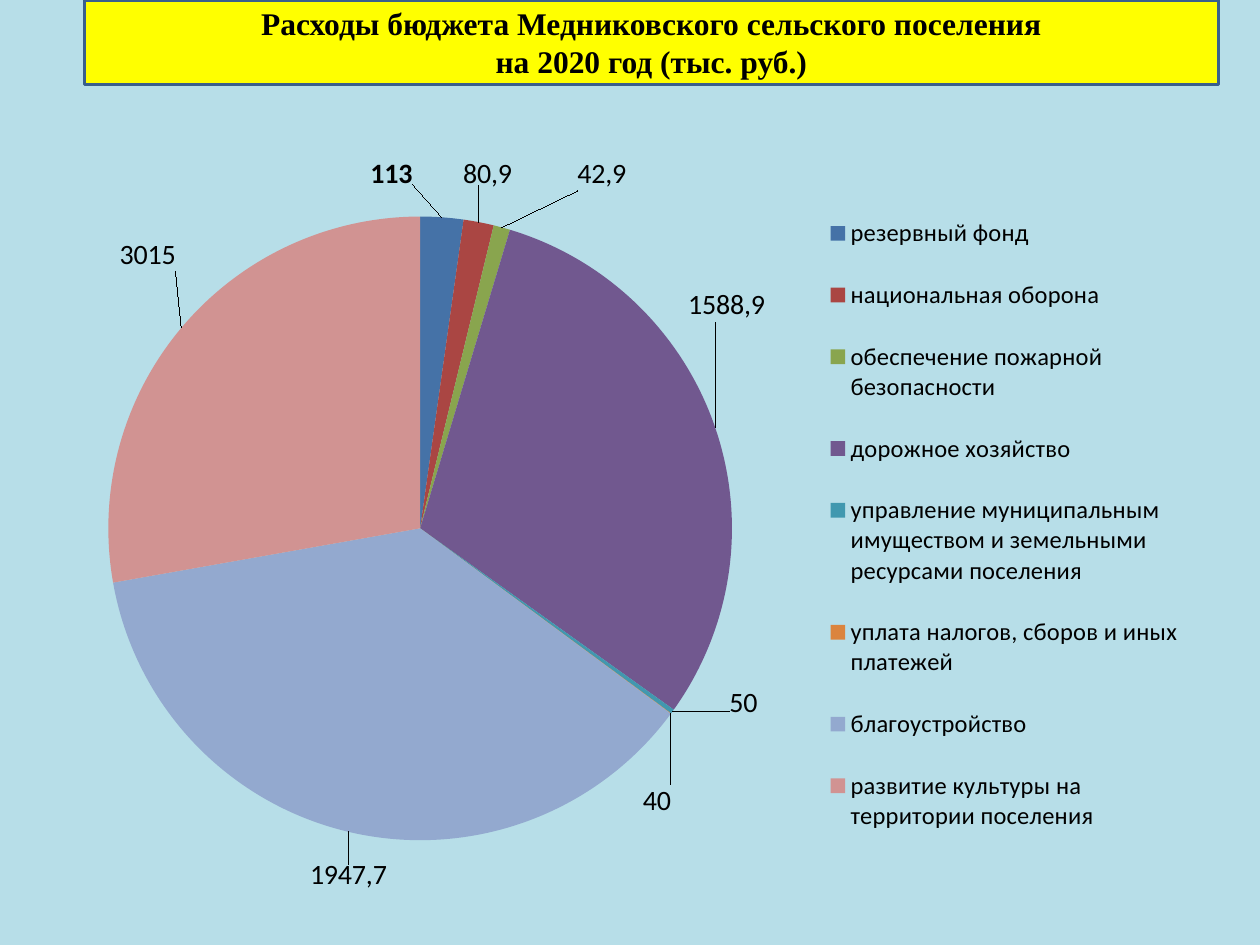
from dataclasses import dataclass

from pptx import Presentation
from pptx import util as u
from pptx.chart import data as chart_data
from pptx.dml.color import RGBColor
from pptx.enum import chart as ch, text
from pptx.oxml import parse_xml
from pptx.oxml.ns import nsdecls, qn


@dataclass(frozen=True)
class Theme:
    background: str = "B7DEE8"
    banner: str = "FFFF00"
    border: str = "3A5F8C"
    ink: str = "000000"
    heading_font: str = "Times New Roman"
    body_font: str = "Calibri"
    heading_size: int = 18
    label_size: int = 16
    legend_size: int = 14


# category, value, label text (None shows the value), label offset, colour
EXPENSES = [
    ("резервный фонд", 113, None, (-0.045, -0.035), "4572A7"),
    ("национальная оборона", 79.5, "80,9", (-0.015, -0.04), "AA4643"),
    ("обеспечение пожарной безопасности", 43.6, "42,9", (0.065, -0.04), "89A54E"),
    ("дорожное хозяйство", 1535, "1588,9", (-0.03, -0.14), "71588F"),
    ("управление муниципальным имуществом и земельными ресурсами поселения",
     12, "50", (0.045, -0.04), "4198AF"),
    ("уплата налогов, сборов и иных платежей", 1, "40", (-0.03, 0.09), "DB843D"),
    ("благоустройство", 1883.1, "1947,7", (0.035, 0.035), "93A9CF"),
    ("развитие культуры на территории поселения", 1411, "3015", (0, -0.07), "D19392"),
]


def layout_xml(inner=False, edge=False, **box):
    """Manual chart layout; values are fractions of the chart size."""
    parts = ['<c:layoutTarget val="inner"/>'] if inner else []
    if edge:
        parts += ['<c:xMode val="edge"/>', '<c:yMode val="edge"/>']
    parts += [f'<c:{key} val="{value}"/>' for key, value in box.items()]
    return parse_xml(f'<c:layout {nsdecls("c")}><c:manualLayout>{"".join(parts)}'
                     '</c:manualLayout></c:layout>')


class SlideBuilder:
    def __init__(self, slide, theme):
        self.slide = slide
        self.theme = theme
        self.paint(slide.background.fill, theme.background)

    def paint(self, fill, colour):
        fill.solid()
        fill.fore_color.rgb = RGBColor.from_string(colour)

    def style_font(self, font, **values):
        font.color.rgb = RGBColor.from_string(self.theme.ink)
        for key, value in values.items():
            setattr(font, key, value)

    def banner_title(self, lines, left, top, width, height):
        banner = self.slide.shapes.title
        place = dict(left=left, top=top, width=width, height=height)
        for key, value in place.items():
            setattr(banner, key, u.Inches(value))
        banner.element.spPr.append(parse_xml(
            f'<a:prstGeom {nsdecls("a")} prst="roundRect"><a:avLst/></a:prstGeom>'))
        self.paint(banner.fill, self.theme.banner)
        self.paint(banner.line.fill, self.theme.border)
        banner.line.width = u.Pt(2)
        frame = banner.text_frame
        frame.text = "\n".join(lines)
        settings = dict(word_wrap=True, auto_size=text.MSO_AUTO_SIZE.NONE,
                        vertical_anchor=text.MSO_ANCHOR.MIDDLE)
        for key, value in settings.items():
            setattr(frame, key, value)
        for line in frame.paragraphs:
            line.alignment = text.PP_ALIGN.CENTER
            line.space_before = u.Pt(0)
            self.style_font(line.runs[0].font, name=self.theme.heading_font,
                            size=u.Pt(self.theme.heading_size), bold=True)

    def pie(self, expenses, left, top, width, height):
        figures = chart_data.CategoryChartData()
        figures.categories = [row[0] for row in expenses]
        figures.add_series("Series 1", [row[1] for row in expenses])
        place = [u.Inches(value) for value in (left, top, width, height)]
        chart = self.slide.shapes.add_chart(
            ch.XL_CHART_TYPE.PIE, *place, figures).chart
        chart.has_title = False
        self.style_font(chart.font, name=self.theme.body_font, size=u.Pt(10))
        self.legend(chart)

        plot_area = chart.element.find(f'.//{qn("c:plotArea")}')
        for old in plot_area.findall(qn("c:layout")):
            plot_area.remove(old)
        plot_area.insert(0, layout_xml(inner=True, edge=True,
                                       x=0.04, y=0.08, w=0.55, h=0.85))
        chart.plots[0].vary_by_categories = True
        self.slices(chart.plots[0].series[0], expenses)

    def legend(self, chart):
        chart.has_legend = True
        legend = chart.legend
        legend.position = ch.XL_LEGEND_POSITION.RIGHT
        legend.include_in_layout = False
        self.style_font(legend.font, size=u.Pt(self.theme.legend_size))
        for old in legend._element.findall(qn("c:layout")):
            legend._element.remove(old)
        legend._element.find(qn("c:legendPos")).addnext(
            layout_xml(edge=True, x=0.67, y=0.04, w=0.32, h=0.92))

    def slices(self, series, expenses):
        labels = series.data_labels
        labels.show_value = True
        bold_label = dict(name=self.theme.body_font,
                          size=u.Pt(self.theme.label_size), bold=True)
        self.style_font(labels.font, **bold_label)
        for index, (_, _, caption, (x, y), colour) in enumerate(expenses):
            point = series.points[index]
            self.paint(point.format.fill, colour)
            label = point.data_label
            if caption is None:
                self.style_font(label.font, **bold_label)
            else:
                label.text_frame.text = caption
                run = label.text_frame.paragraphs[0].runs[0]
                self.style_font(run.font, **{**bold_label, "bold": False})
            label.position = ch.XL_LABEL_POSITION.OUTSIDE_END
            entry = labels._element.findall(qn("c:dLbl"))[index]
            entry.find(qn("c:idx")).addnext(layout_xml(x=x, y=y))


def main():
    deck = Presentation()
    deck.slide_width, deck.slide_height = u.Inches(10), u.Inches(7.5)
    title_only = deck.slide_layouts[5]
    builder = SlideBuilder(deck.slides.add_slide(title_only), Theme())
    builder.banner_title(["Расходы бюджета Медниковского сельского поселения",
                          "на 2020 год (тыс. руб.)"], 0.67, 0, 9, 0.67)
    builder.pie(EXPENSES, 0.5, 1.25, 9, 5.83)
    deck.save("out.pptx")


if __name__ == "__main__":
    main()
